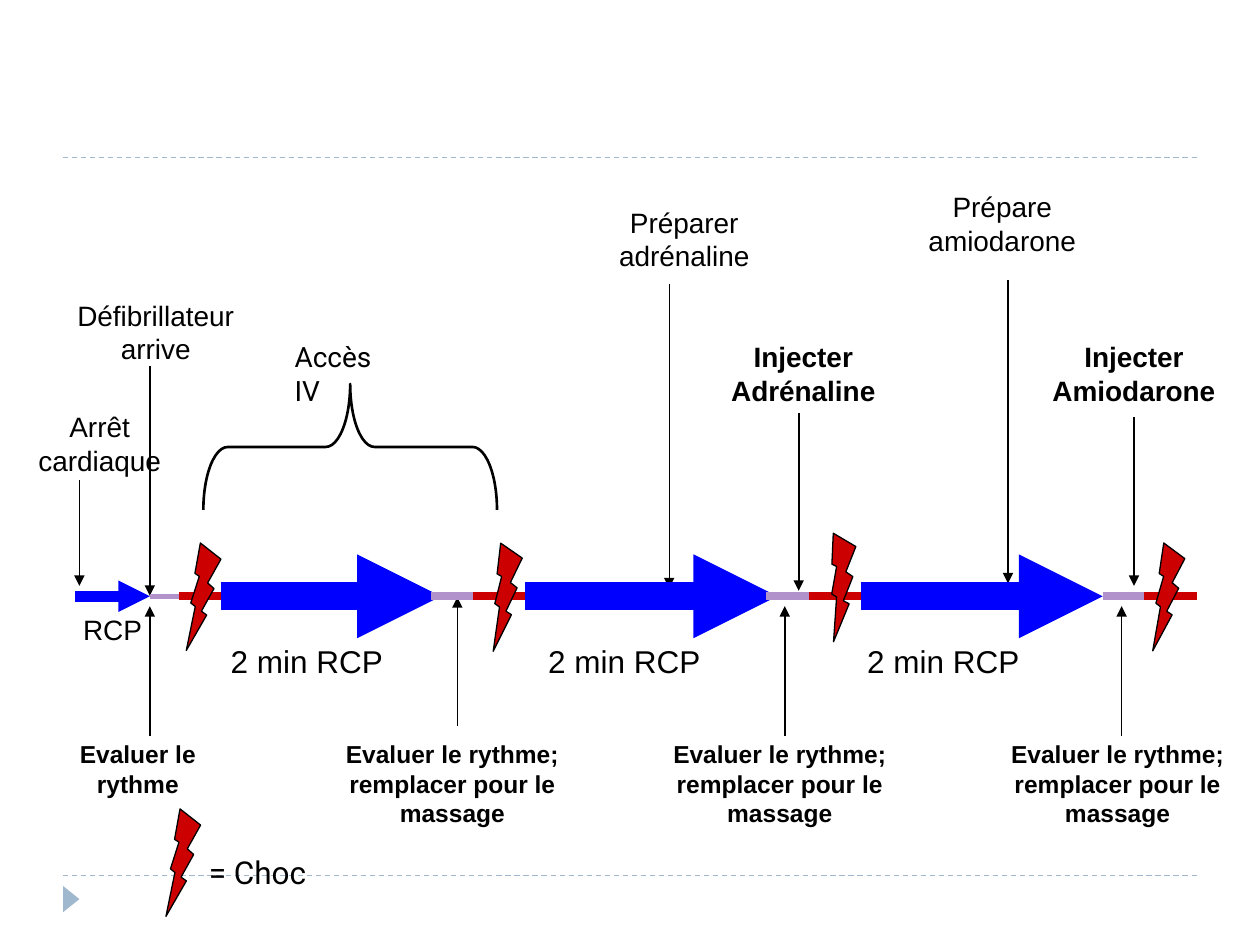
from lxml.etree import SubElement
from pptx import Presentation
from pptx.dml.color import RGBColor
from pptx.enum.dml import MSO_LINE
from pptx.enum.shapes import MSO_CONNECTOR, MSO_SHAPE
from pptx.enum.text import PP_ALIGN
from pptx.oxml.ns import qn
from pptx.util import Cm, Pt

BLACK = RGBColor(0x00, 0x00, 0x00)
BLUE = RGBColor(0x00, 0x00, 0xFF)
PURPLE = RGBColor(0xB2, 0x92, 0xCA)
RED = RGBColor(0xCC, 0x00, 0x00)
GREY_BLUE = RGBColor(0x9F, 0xB8, 0xCD)

# Content; all lengths in centimetres
RULES = [3.17, 17.65]
AXIS = 12.02
SEGMENTS = [  # start, end, colour, width in points
    (1.52, 3.02, BLUE, 6), (3.02, 3.61, PURPLE, 3), (3.61, 4.65, RED, 4.5),
    (4.45, 8.89, BLUE, 16), (8.69, 9.53, PURPLE, 4.5), (9.53, 10.59, RED, 4.5),
    (10.59, 15.67, BLUE, 16), (15.44, 16.31, PURPLE, 4.5), (16.31, 17.35, RED, 4.5),
    (17.35, 22.23, BLUE, 16), (22.23, 23.06, PURPLE, 4.5), (23.06, 24.13, RED, 4.5),
]
EVENT_ARROWS = [  # x, start, end, width in points
    (13.49, 5.72, 11.86, 0.75), (16.1, 8.33, 11.91, 1), (1.6, 9.68, 11.81, 1),
    (3.02, 7.37, 12.01, 1), (20.32, 5.64, 11.76, 0.75), (22.86, 8.41, 11.81, 1),
    (3.02, 14.83, 12.22, 1), (9.22, 14.63, 12.04, 1),
    (15.82, 14.83, 12.22, 1), (22.61, 14.83, 12.22, 1),
]
BOLT_SIZE = (0.94, 2.11)
BOLTS = [  # left, top, rotation
    (3.61, 10.95, 352.3), (9.73, 10.95, 348.8), (16.51, 10.74, 344.7),
    (23.06, 10.95, 350.7), (3.2, 16.31, 352.3),
]

EVENT = {"size": Pt(16), "name": "Arial", "bold": False}
DRUG = EVENT | {"bold": True}
CHECK = DRUG | {"size": Pt(14)}
CYCLE = EVENT | {"size": Pt(18)}
ACCESS = EVENT | {"name": "Roboto"}
LEGEND = CYCLE | {"name": "Roboto"}
CENTRED = {"alignment": PP_ALIGN.CENTER}
LEFT = {"alignment": PP_ALIGN.LEFT}
TIGHT = CENTRED | {"line_spacing": 0.85}

LABELS = [  # left, top, width, height, lines, font, paragraph format
    (5.69, 6.73, 2.3, 1.63, ["Accès IV"], ACCESS, LEFT),
    (0.31, 8.13, 3.4, 1.63, ["Arrêt", "cardiaque"], EVENT, CENTRED),
    (1.1, 5.89, 4.08, 1.63, ["Défibrillateur", "arrive"], EVENT, CENTRED),
    (12.02, 4.01, 3.55, 1.63, ["Préparer", "adrénaline"], EVENT, CENTRED),
    (18.21, 3.7, 3.99, 1.63, ["Prépare", "amiodarone"], EVENT, CENTRED),
    (13.97, 6.73, 4.45, 1.63, ["Injecter", "Adrénaline"], DRUG, CENTRED),
    (20.32, 6.73, 5.08, 1.63, ["Injecter", "Amiodarone"], DRUG, CENTRED),
    (1.22, 12.22, 2.1, 0.94, ["RCP"], EVENT, CENTRED),
    (1.08, 14.78, 3.4, 1.45, ["Evaluer le", "rythme"], CHECK, CENTRED),
    (3.96, 17.07, 3, 1.02, ["= Choc"], LEGEND, LEFT),
]
LABELS += [(left, 12.93, 4.19, 0.91, ["2 min RCP"], CYCLE, TIGHT)
           for left in (4.09, 10.49, 16.92)]
LABELS += [(left, 14.78, 5.44, 2.03,
            ["Evaluer le rythme; remplacer pour le massage"], CHECK, CENTRED)
           for left in (6.4, 13, 19.81)]


def apply(target, values):
    for name, value in values.items():
        setattr(target, name, value)


def add_line(x1, y1, x2, y2, color, width, arrow=False, dashed=False):
    line = slide.shapes.add_connector(
        MSO_CONNECTOR.STRAIGHT, Cm(x1), Cm(y1), Cm(x2), Cm(y2))
    line.line.color.rgb = color
    line.line.width = Pt(width)
    if dashed:
        line.line.dash_style = MSO_LINE.DASH
    if arrow:
        SubElement(line.line._get_or_add_ln(), qn("a:tailEnd"), type="triangle")
    SubElement(line._element.spPr, qn("a:effectLst"))


def add_figure(kind, left, top, width, height, rotation, fill=None, outline=None):
    figure = slide.shapes.add_shape(kind, Cm(left), Cm(top), Cm(width), Cm(height))
    figure.rotation = rotation
    figure.shadow.inherit = False
    if fill is None:
        figure.fill.background()
    else:
        figure.fill.solid()
        figure.fill.fore_color.rgb = fill
    if outline is None:
        figure.line.fill.background()
    else:
        figure.line.color.rgb = BLACK
        figure.line.width = Pt(outline)
    return figure


def add_label(left, top, width, height, lines, font, layout):
    box = slide.shapes.add_textbox(Cm(left), Cm(top), Cm(width), Cm(height))
    frame = box.text_frame
    frame.word_wrap = True
    for index, text in enumerate(lines):
        para = frame.add_paragraph() if index else frame.paragraphs[0]
        apply(para, layout)
        span = para.add_run()
        span.text = text
        apply(span.font, font)
        span.font.color.rgb = BLACK


deck = Presentation()
deck.slide_width, deck.slide_height = Cm(25.4), Cm(19.05)
slide = deck.slides.add_slide(deck.slide_layouts[6])

# Page frame
for y in RULES:
    add_line(1.27, y, 24.13, y, GREY_BLUE, 0.75, dashed=True)
add_figure(MSO_SHAPE.ISOSCELES_TRIANGLE, 1.17, 17.96, 0.53, 0.33, 90, GREY_BLUE)

# Brace over the first cycle
brace = add_figure(MSO_SHAPE.RIGHT_BRACE, 5.79, 6.05, 2.54, 5.92, 270, outline=1.5)
brace.adjustments[0] = 0.194

# Event arrows, then the timeline over them
for x, start, end, width in EVENT_ARROWS:
    add_line(x, start, x, end, BLACK, width, arrow=True)
for start, end, color, width in SEGMENTS:
    add_line(start, AXIS, end, AXIS, color, width, arrow=color == BLUE)

# Shocks
for left, top, rotation in BOLTS:
    bolt = add_figure(MSO_SHAPE.LIGHTNING_BOLT, left, top, *BOLT_SIZE, rotation, RED, 0.75)
    bolt._element.spPr.xfrm.set("flipH", "1")

# Labels
for label in LABELS:
    add_label(*label)

deck.save("out.pptx")
